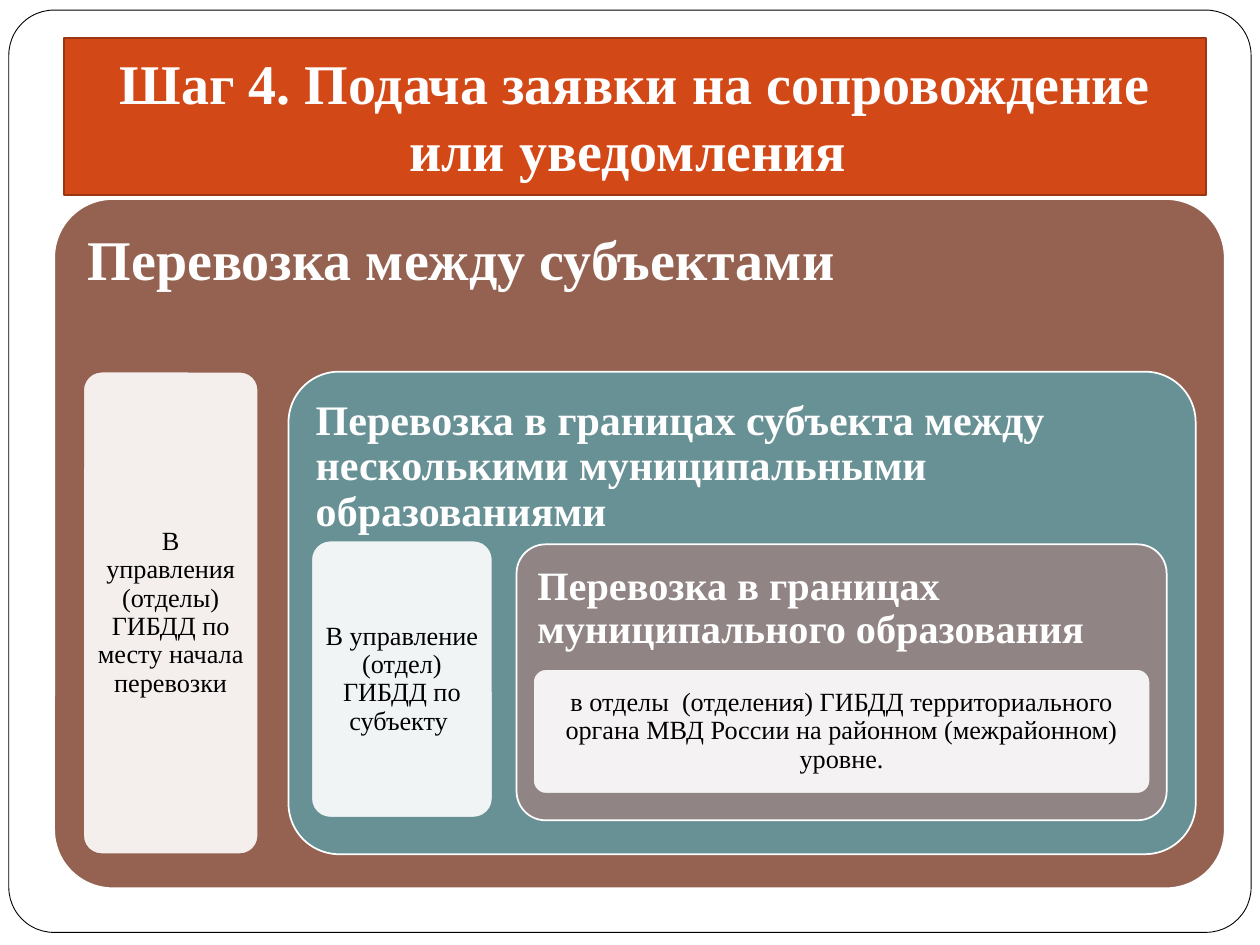
from lxml import etree
from pptx import Presentation
from pptx import util as u
from pptx.dml.color import RGBColor
from pptx.enum import shapes, text
from pptx.oxml.ns import qn

FONT = "Times New Roman"
COLORS = {
    "white": "FFFFFF",
    "black": "000000",
    "orange": "D34817",
    "rust": "9C3511",
    "brown": "956251",
    "teal": "689195",
    "mauve": "918485",
}

# Each level: colour, heading, size, corner, box, then the note's text and box
LEVELS = [
    ("brown", "Перевозка между субъектами", 32, 0.085, 0.13,
     (0.43, 1.58, 9.29, 5.47),
     "В управления (отделы) ГИБДД по месту начала перевозки",
     (0.66, 2.95, 1.39, 3.83)),
    ("teal", "Перевозка в границах субъекта между несколькими муниципальными образованиями",
     24, 0.105, 0.1, (2.29, 2.95, 7.2, 3.83),
     "В управление (отдел) ГИБДД по субъекту ",
     (2.47, 4.29, 1.44, 2.2)),
    ("mauve", "Перевозка в границах муниципального образования",
     23, 0.105, 0.1, (4.1, 4.32, 5.16, 2.19),
     "в отделы  (отделения) ГИБДД территориального органа МВД России "
     "на районном (межрайонном) уровне.",
     (4.23, 5.31, 4.9, 0.99)),
]


def rgb(name):
    return RGBColor.from_string(COLORS[name])


def paint(sp, fill, line, width=1):
    sp.fill.solid()
    sp.fill.fore_color.rgb = rgb(fill)
    sp.line.color.rgb = rgb(line)
    sp.line.width = u.Pt(width)


def set_opacity(sp, percent):
    color = sp.element.spPr.find(qn("a:solidFill"))[0]
    etree.SubElement(color, qn("a:alpha")).set("val", str(percent * 1000))


def write(sp, words, size, color, bold, align, anchor, insets, spacing=None):
    """Fill a shape with one paragraph; insets are left, top, right, bottom."""
    tf = sp.text_frame
    tf.word_wrap = True
    tf.auto_size = text.MSO_AUTO_SIZE.NONE
    tf.vertical_anchor = anchor
    tf.margin_left, tf.margin_top, tf.margin_right, tf.margin_bottom = map(u.Inches, insets)
    p = tf.paragraphs[0]
    p.alignment = align
    if spacing:
        p.line_spacing = spacing
    r = p.add_run()
    r.text = words
    r.font.name = FONT
    r.font.size = u.Pt(size)
    r.font.bold = bold
    r.font.color.rgb = rgb(color)


def add_round_box(s, box, corner, fill, line, width=1):
    sp = s.shapes.add_shape(shapes.MSO_SHAPE.ROUNDED_RECTANGLE, *map(u.Inches, box))
    sp.adjustments[0] = corner
    sp.shadow.inherit = False
    paint(sp, fill, line, width)
    return sp


def add_title(s, words):
    title = s.shapes.title
    title.left, title.top, title.width, title.height = map(u.Inches, (0.51, 0.3, 9.06, 1.25))
    paint(title, "orange", "rust")
    write(title, words, 32, "white", True, text.PP_ALIGN.CENTER,
          text.MSO_ANCHOR.BOTTOM, (0.1, 0.05, 0.1, 0.1))
    return title


def add_level(s, color, heading, size, corner, inset, box, note, note_box):
    panel = add_round_box(s, box, corner, color, "white")
    write(panel, heading, size, "white", True, text.PP_ALIGN.LEFT,
          text.MSO_ANCHOR.TOP, (inset,) * 4, 0.9)
    card = add_round_box(s, note_box, 0.105, "white", color)
    set_opacity(card, 90)
    write(card, note, 15, "black", False, text.PP_ALIGN.CENTER,
          text.MSO_ANCHOR.MIDDLE, (0.06,) * 4, 0.9)


def main():
    prs = Presentation()
    prs.slide_width, prs.slide_height = u.Inches(10), u.Inches(7.5)
    s = prs.slides.add_slide(prs.slide_layouts.get_by_name("Title Only"))
    frame = add_round_box(s, (0.07, 0.08, 9.86, 7.32), 0.049, "white", "black", 0.5)
    title = add_title(s, "Шаг 4. Подача заявки на сопровождение или уведомления ")
    title.element.addprevious(frame.element)
    for level in LEVELS:
        add_level(s, *level)
    prs.save("out.pptx")


if __name__ == "__main__":
    main()
